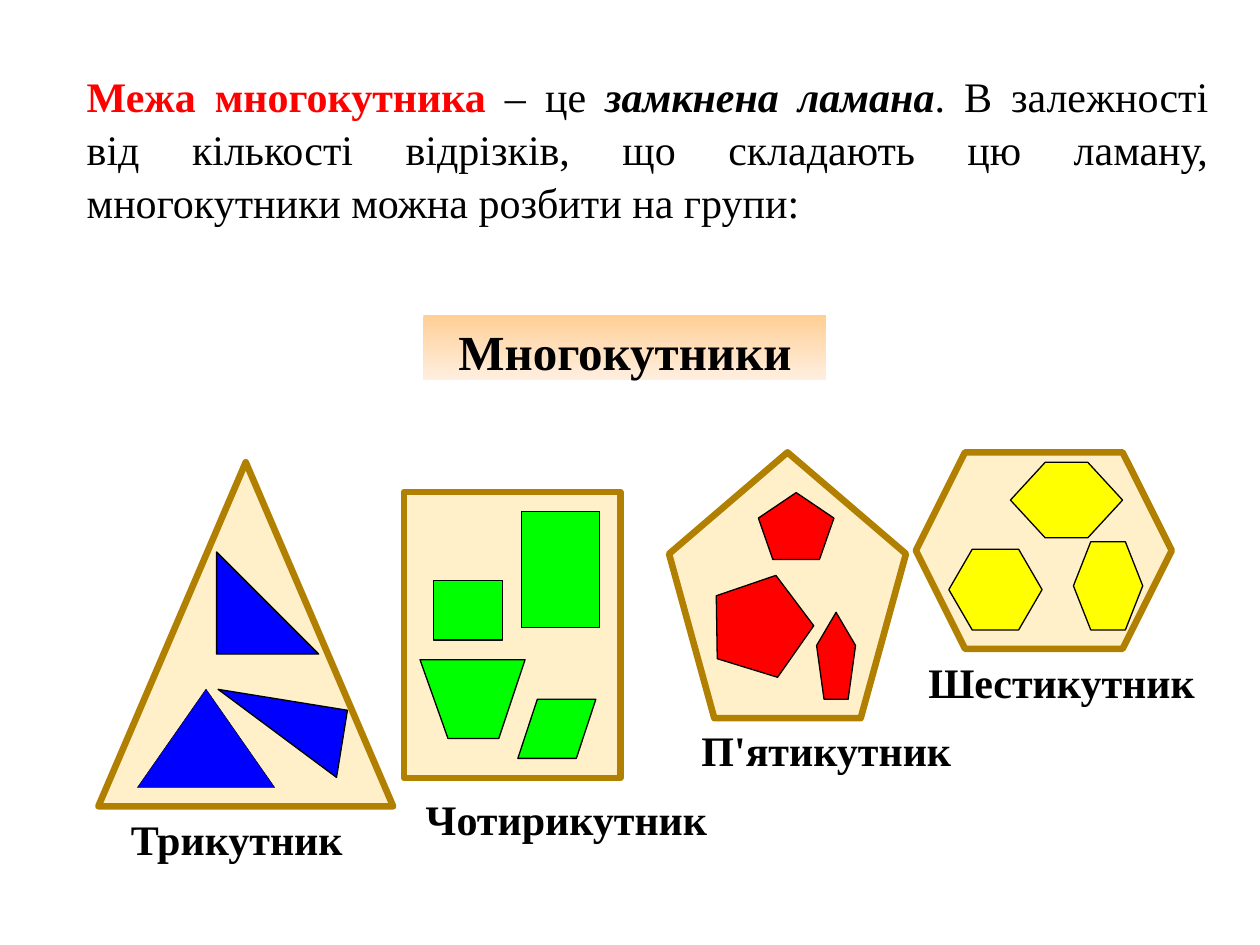
from dataclasses import dataclass

from pptx import Presentation
from pptx.dml.color import RGBColor
from pptx.enum import shapes, text
from pptx.util import Pt

FORM = shapes.MSO_SHAPE


@dataclass(frozen=True)
class Theme:
    font: str = "Times New Roman"
    heading_size: float = 28
    text_size: float = 24
    ink: str = "000000"
    accent: str = "FF0000"
    heading_top: str = "FFCF96"
    heading_bottom: str = "FFEFE0"
    frame_fill: str = "FFF0C9"
    frame_line: str = "B28000"
    frame_width: float = 3.78
    figure_width: float = 0.75
    triangles: str = "0000FF"
    quadrilaterals: str = "00FF00"
    pentagons: str = "FF0000"
    hexagons: str = "FFFF00"


def add_run(paragraph, wording, *, theme, size=None, color=None, bold=False, italic=False):
    run = paragraph.add_run()
    run.text = wording
    font = run.font
    font.name = theme.font
    font.size = Pt(size or theme.text_size)
    font.color.rgb = RGBColor.from_string(color or theme.ink)
    font.bold, font.italic = bold, italic


class PolygonSlide:
    def __init__(self, deck, theme):
        self.theme = theme
        self.slide = deck.slides.add_slide(deck.slide_layouts[5])

    def heading(self, wording, left, top, width, height):
        title = self.slide.shapes.title
        title.left, title.top, title.width, title.height = map(Pt, (left, top, width, height))
        title.fill.gradient()
        title.fill.gradient_angle = 270
        tones = (self.theme.heading_top, self.theme.heading_bottom)
        for stop, tone in zip(title.fill.gradient_stops, tones):
            stop.color.rgb = RGBColor.from_string(tone)
        frame = title.text_frame
        frame.auto_size = text.MSO_AUTO_SIZE.NONE
        frame.vertical_anchor = text.MSO_ANCHOR.MIDDLE
        frame.margin_bottom = 0
        paragraph = frame.paragraphs[0]
        paragraph.alignment = text.PP_ALIGN.CENTER
        add_run(paragraph, wording, theme=self.theme, size=self.theme.heading_size, bold=True)

    def text_box(self, runs, left, top, width, height, *, wrap=False,
                 align=text.PP_ALIGN.LEFT, spacing=1.0):
        """Place one paragraph made of (wording, format) pairs."""
        box = self.slide.shapes.add_textbox(*map(Pt, (left, top, width, height)))
        box.text_frame.word_wrap = wrap
        paragraph = box.text_frame.paragraphs[0]
        paragraph.alignment = align
        paragraph.line_spacing = spacing
        for wording, style in runs:
            add_run(paragraph, wording, theme=self.theme, **style)

    def label(self, wording, left, top, width):
        self.text_box([(wording, {"bold": True})], left, top, width, 36)

    def paint(self, shape, fill, line, width):
        shape.shadow.inherit = False
        shape.fill.solid()
        shape.fill.fore_color.rgb = RGBColor.from_string(fill)
        shape.line.color.rgb = RGBColor.from_string(line)
        shape.line.width = Pt(width)

    def frame(self, form, *place):
        shape = self.slide.shapes.add_shape(form, *map(Pt, place))
        self.paint(shape, self.theme.frame_fill, self.theme.frame_line, self.theme.frame_width)

    def figure(self, form, place, fill, *, turn=0, slant=None, outline=None):
        shape = self.slide.shapes.add_shape(form, *map(Pt, place))
        shape.rotation = turn
        if slant is not None:
            shape.adjustments[0] = slant
        self.paint(shape, fill, self.theme.ink, outline or self.theme.figure_width)

    def outline_figure(self, corners, fill):
        builder = self.slide.shapes.build_freeform(*corners[0], scale=Pt(1))
        builder.add_line_segments(corners[1:], close=True)
        self.paint(builder.convert_to_shape(), fill, self.theme.ink, self.theme.figure_width)


def main():
    deck = Presentation()
    deck.slide_width, deck.slide_height = Pt(720), Pt(540)
    theme = Theme()
    page = PolygonSlide(deck, theme)

    definition = [
        ("Межа многокутника ", {"color": theme.accent, "bold": True}),
        ("– це ", {}),
        ("замкнена ламана", {"bold": True, "italic": True}),
        (". В залежності від кількості відрізків, що складають цю ламану, "
         "многокутники можна розбити на групи:", {}),
    ]
    page.text_box(definition, 42.5, 35.3, 655.2, 116.6, wrap=True,
                  align=text.PP_ALIGN.JUSTIFY, spacing=1.05)
    page.heading("Многокутники", 241.9, 180, 230.4, 37.4)

    page.frame(FORM.ISOSCELES_TRIANGLE, 56.2, 264.2, 168.5, 196.6)
    page.figure(FORM.ISOSCELES_TRIANGLE, (78.5, 393.8, 78.5, 56.2), theme.triangles, outline=0.25)
    page.figure(FORM.RIGHT_TRIANGLE, (123.8, 315.4, 58.3, 58.3), theme.triangles)
    page.figure(FORM.RIGHT_TRIANGLE, (121, 399.6, 74.9, 38.9), theme.triangles, turn=189.2)
    page.label("Трикутник", 67.7, 461.5, 136.8)

    page.frame(FORM.RECTANGLE, 230.8, 281.2, 123.8, 163.4)
    for place in ((247.7, 331.9, 39.6, 33.8), (298.1, 292.3, 44.6, 66.2)):
        page.figure(FORM.RECTANGLE, place, theme.quadrilaterals)
    trapezium = [(240.5, 376.6), (255.6, 421.9), (285.1, 421.9), (299.5, 376.6)]
    page.outline_figure(trapezium, theme.quadrilaterals)
    page.figure(FORM.PARALLELOGRAM, (295.9, 399.6, 44.6, 33.8), theme.quadrilaterals, slant=0.33)
    page.label("Чотирикутник", 236.2, 450, 177.1)

    page.frame(FORM.REGULAR_PENTAGON, 382.3, 258.5, 135.4, 151.9)
    for place, turn in (((406.1, 327.6, 58.3, 55.4), 17.1),
                        ((433.4, 281.5, 43.2, 38.2), 0),
                        ((466.6, 349.9, 22.3, 49.7), 0)):
        page.figure(FORM.REGULAR_PENTAGON, place, theme.pentagons, turn=turn)
    page.label("П'ятикутник", 393.8, 410.4, 158.4)

    page.frame(FORM.HEXAGON, 523.4, 258.5, 146.2, 112.3)
    for place, slant in (((542.2, 313.9, 53.3, 46.1), 0.29),
                         ((577.4, 264.2, 64.1, 43.2), 0.46),
                         ((613.4, 309.6, 39.6, 50.4), 0.25)):
        page.figure(FORM.HEXAGON, place, theme.hexagons, slant=slant)
    page.label("Шестикутник", 523.4, 371.5, 168.5)

    deck.save("out.pptx")


if __name__ == "__main__":
    main()
